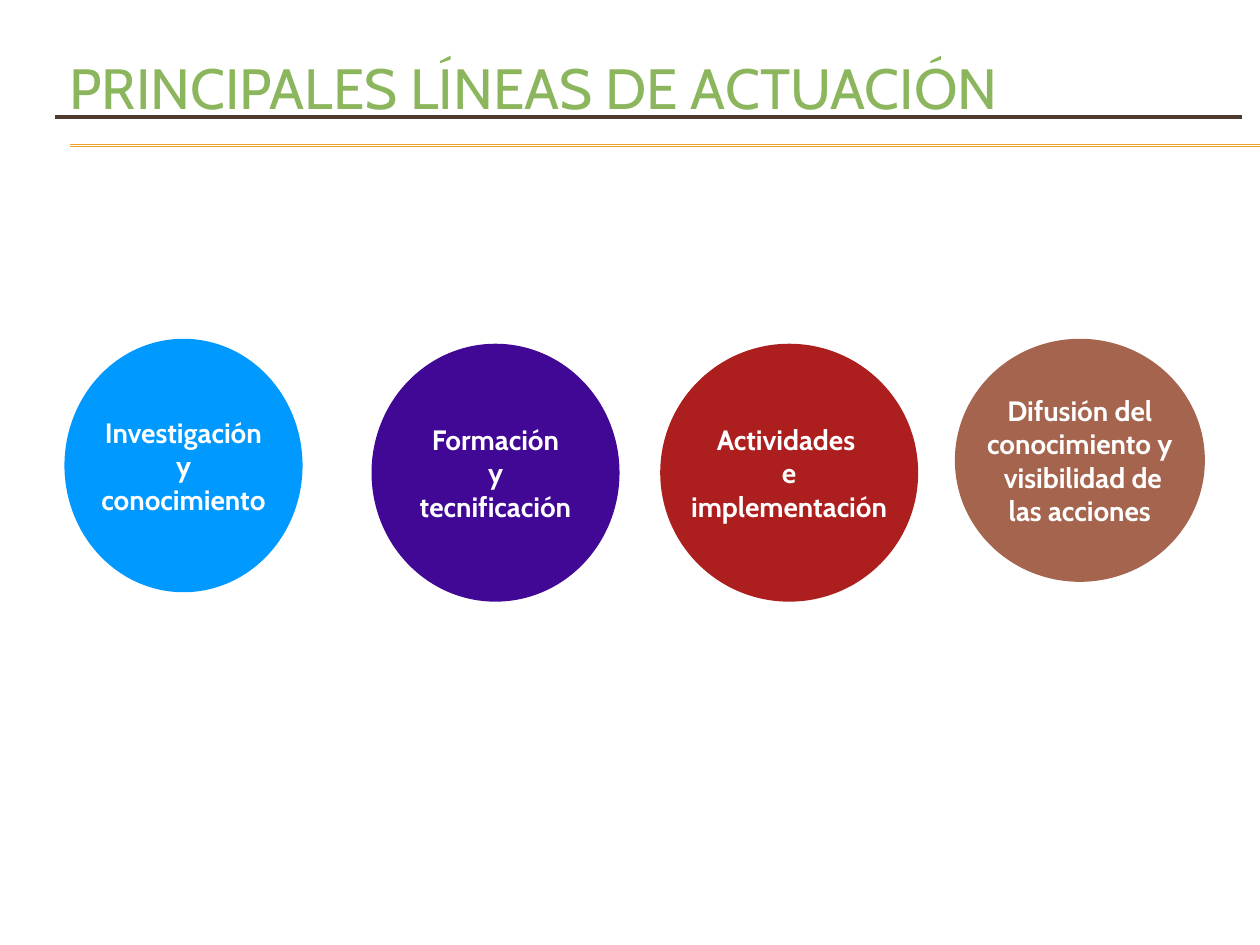
from pptx import Presentation
from pptx.dml.color import RGBColor
from pptx.enum.shapes import MSO_CONNECTOR, MSO_SHAPE
from pptx.enum.text import MSO_ANCHOR, MSO_AUTO_SIZE, PP_ALIGN
from pptx.oxml.ns import qn
from pptx.util import Cm, Pt
from lxml.etree import SubElement

FONT = "Cabin"
WHITE = RGBColor(0xFF, 0xFF, 0xFF)
GREEN = RGBColor(0x8C, 0xB6, 0x5D)
ORANGE = RGBColor(0xF0, 0xA2, 0x2E)
DARK_BROWN = RGBColor(0x4E, 0x3B, 0x30)
BLUE = RGBColor(0x00, 0x99, 0xFF)
PURPLE = RGBColor(0x41, 0x08, 0x96)
RED = RGBColor(0xAD, 0x1F, 0x1F)
BROWN = RGBColor(0xA5, 0x64, 0x4E)

presentation = Presentation()
presentation.slide_width = Cm(25.4)
presentation.slide_height = Cm(19.05)
slide = presentation.slides.add_slide(presentation.slide_layouts[5])

# Title
title = slide.shapes.title
title.left, title.top, title.width, title.height = Cm(1.17), Cm(1.17), Cm(22.86), Cm(1.17)
title_frame = title.text_frame
title_frame.text = "PRINCIPALES LÍNEAS DE ACTUACIÓN"
title_frame.auto_size = MSO_AUTO_SIZE.NONE
title_frame.vertical_anchor = MSO_ANCHOR.MIDDLE
title_frame.margin_left = title_frame.margin_right = Cm(0.23)
title_frame.margin_top = title_frame.margin_bottom = Cm(0.1)
paragraph = title_frame.paragraphs[0]
paragraph.alignment = PP_ALIGN.LEFT
paragraph.font.name = FONT
paragraph.font.size = Pt(32.4)
paragraph.font.color.rgb = GREEN

# Rules under the title: left, right, height, colour, width
rules = [
    (1.42, 25.4, 2.92, ORANGE, 0.75),
    (1.42, 25.4, 2.95, ORANGE, 0.75),
    (1.1, 25.04, 2.36, DARK_BROWN, 2.25),
]
for left, right, top, color, width in rules:
    rule = slide.shapes.add_connector(
        MSO_CONNECTOR.STRAIGHT, Cm(left), Cm(top), Cm(right), Cm(top))
    rule.line.color.rgb = color
    rule.line.width = Pt(width)
    SubElement(rule._element.spPr, qn("a:effectLst"))

# Lines of action: left, top, width, height, colour, text
circles = [
    (1.3, 6.83, 4.8, 5.11, BLUE, "Investigación\ny\nconocimiento"),
    (7.49, 6.93, 5.0, 5.2, PURPLE, "Formación\ny\ntecnificación"),
    (13.31, 6.93, 5.2, 5.2, RED, "Actividades \ne\nimplementación"),
    (19.25, 6.83, 5.04, 4.9, BROWN,
     "Difusión del\nconocimiento y\n visibilidad de\nlas acciones"),
]
for left, top, width, height, color, text in circles:
    circle = slide.shapes.add_shape(
        MSO_SHAPE.OVAL, Cm(left), Cm(top), Cm(width), Cm(height))
    circle.shadow.inherit = False
    circle.fill.solid()
    circle.fill.fore_color.rgb = color
    circle.line.fill.background()
    frame = circle.text_frame
    frame.text = text
    frame.word_wrap = False
    frame.vertical_anchor = MSO_ANCHOR.MIDDLE
    frame.margin_left = frame.margin_right = frame.margin_top = frame.margin_bottom = 0
    for paragraph in frame.paragraphs:
        paragraph.alignment = PP_ALIGN.CENTER
        paragraph.font.name = FONT
        paragraph.font.size = Pt(16)
        paragraph.font.bold = True
        paragraph.font.color.rgb = WHITE

presentation.save("out.pptx")
